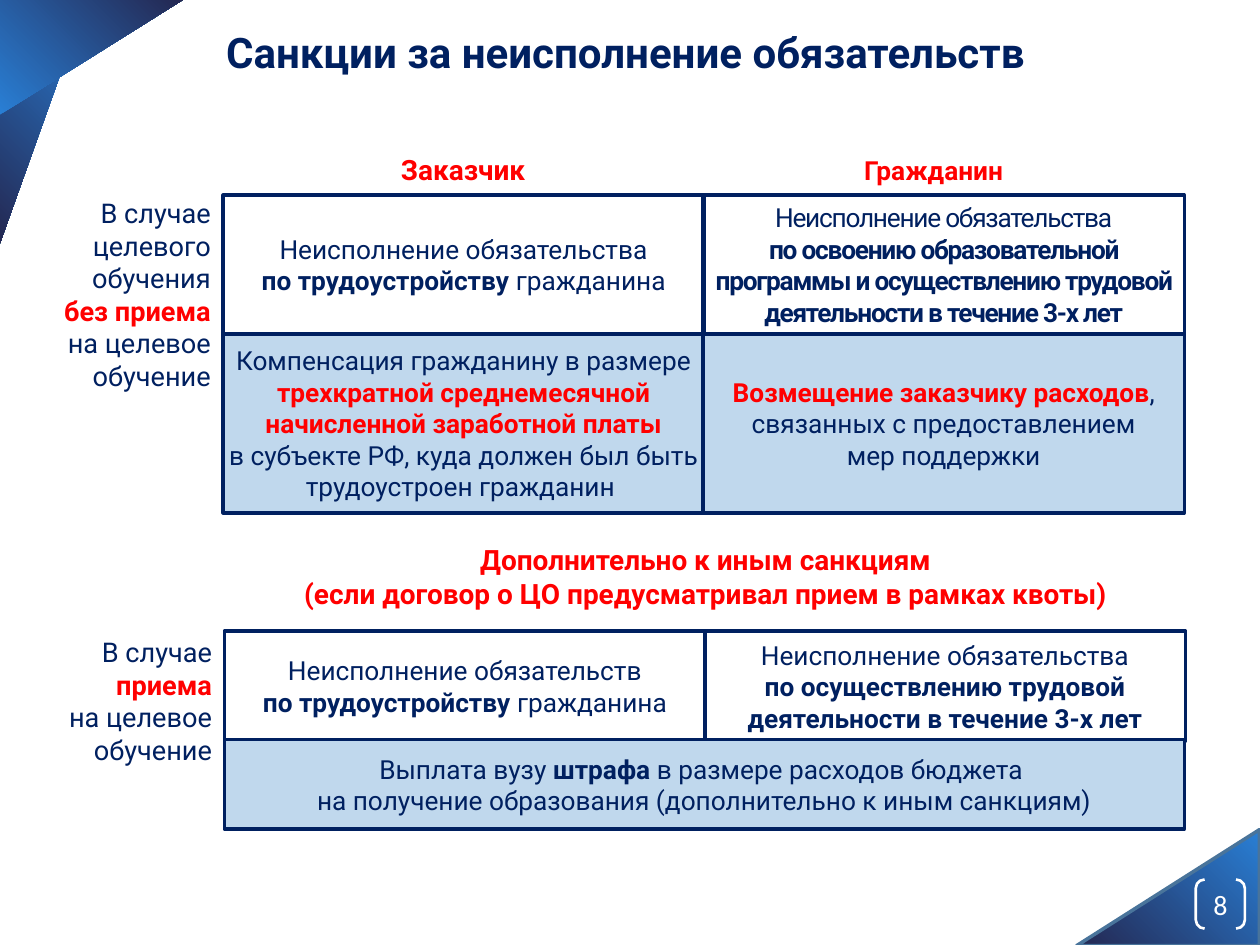
from copy import deepcopy
from dataclasses import dataclass

from pptx import Presentation
from pptx.dml.color import RGBColor
from pptx.enum.shapes import MSO_SHAPE
from pptx.enum.text import MSO_ANCHOR, MSO_AUTO_SIZE, PP_ALIGN
from pptx.util import Inches, Pt

TRIANGLE, RECTANGLE = MSO_SHAPE.RIGHT_TRIANGLE, MSO_SHAPE.RECTANGLE
BRACKETS = MSO_SHAPE.DOUBLE_BRACKET
CENTER, RIGHT = PP_ALIGN.CENTER, PP_ALIGN.RIGHT
TOP, MIDDLE = MSO_ANCHOR.TOP, MSO_ANCHOR.MIDDLE
NAVY, RED, WHITE, PALE = "002060", "FF0000", "FFFFFF", "C0D8ED"
GRADIENT = ("297FD5", "242852")

Box = tuple[float, float, float, float]


@dataclass
class Run:
    text: str
    bold: bool = False
    color: str = NAVY


@dataclass
class Block:
    box: Box
    paragraphs: list[list[Run]]
    size: float = 15
    align: PP_ALIGN = CENTER
    fill: str | None = None
    spacing: float = 0


@dataclass
class Corner:
    box: Box
    rotation: int
    flipped: bool = False
    outline: str | None = None


def rgb(color: str) -> RGBColor:
    return RGBColor.from_string(color)


def red(text: str) -> Run:
    return Run(text, True, RED)


def bold(text: str) -> Run:
    return Run(text, True)


def inches(box: Box) -> list[Inches]:
    return [Inches(value) for value in box]


def set_line(shape, color: str | None, width: float = 2) -> None:
    """Outline the shape, or remove its outline when there is no colour."""
    if color is None:
        shape.line.fill.background()
        return
    shape.line.color.rgb = rgb(color)
    shape.line.width = Pt(width)


def set_margins(frame, side: float, vertical: float) -> None:
    margins = {"margin_left": side, "margin_right": side,
               "margin_top": vertical, "margin_bottom": vertical}
    for name, value in margins.items():
        setattr(frame, name, Inches(value))


def add_run(paragraph, text: str, spacing: float, font: dict):
    run = paragraph.add_run()
    run.text = text
    for name, value in font.items():
        setattr(run.font, name, value)
    if spacing:
        run.font._element.set("spc", str(round(spacing * 100)))
    return run


def write(frame, paragraphs: list[list[Run]], size: float, align=CENTER,
          anchor=MIDDLE, spacing: float = 0, font_name: str = "Roboto") -> None:
    """Fill a text frame; a newline inside a run becomes a line break."""
    frame.word_wrap = True
    frame.vertical_anchor = anchor
    for index, runs in enumerate(paragraphs):
        paragraph = frame.add_paragraph() if index else frame.paragraphs[0]
        paragraph.alignment = align
        for part in runs:
            font = {"name": font_name, "size": Pt(size), "bold": part.bold}
            lines = part.text.split("\n")
            for number, line in enumerate(lines):
                if number:
                    paragraph.add_line_break()
                    # the break takes the font of the run before it
                    paragraph._p[-1].append(deepcopy(run.font._element))
                if line:
                    run = add_run(paragraph, line, spacing, font)
                    run.font.color.rgb = rgb(part.color)


def add_corner(slide, corner: Corner) -> None:
    shape = slide.shapes.add_shape(TRIANGLE, *inches(corner.box))
    shape.shadow.inherit = False
    shape.rotation = corner.rotation
    if corner.flipped:
        shape._element.spPr.xfrm.set("flipH", "1")
    shape.fill.gradient()
    shape.fill.gradient_angle = 135
    for stop, color in zip(shape.fill.gradient_stops, GRADIENT):
        stop.color.rgb = rgb(color)
    set_line(shape, corner.outline)


def add_page_number(slide, number: str) -> None:
    shape = slide.shapes.add_shape(BRACKETS, *inches((9.49, 6.98, 0.39, 0.39)))
    shape.shadow.inherit = False
    shape.adjustments[0] = 0.18
    shape.fill.background()
    set_line(shape, WHITE, 1.5)
    set_margins(shape.text_frame, 0, 0)
    write(shape.text_frame, [[Run(number, color=WHITE)]], 16, font_name="Calibri")


def add_title(slide, text: str) -> None:
    title = slide.shapes.title
    title.left, title.top, title.width, title.height = inches((0.28, 0.16, 9.37, 0.5))
    frame = title.text_frame
    frame.auto_size = MSO_AUTO_SIZE.NONE
    set_margins(frame, 0.1, 0.05)
    write(frame, [[bold(text)]], 24, anchor=TOP)


def add_label(slide, block: Block) -> None:
    label = slide.shapes.add_textbox(*inches(block.box))
    write(label.text_frame, block.paragraphs, block.size, block.align)


def add_cell(slide, block: Block) -> None:
    cell = slide.shapes.add_shape(RECTANGLE, *inches(block.box))
    cell.shadow.inherit = False
    if block.fill:
        cell.fill.solid()
        cell.fill.fore_color.rgb = rgb(block.fill)
    else:
        cell.fill.background()
    set_line(cell, NAVY)
    set_margins(cell.text_frame, 0.04, 0)
    write(cell.text_frame, block.paragraphs, block.size, block.align,
          spacing=block.spacing)


CUSTOMER_X, CITIZEN_X, CELL_W = 1.77, 5.58, 3.82
QUOTA_SHIFT = 0.01  # the lower grid stands slightly to the right
QUOTA_X = CUSTOMER_X + QUOTA_SHIFT
DUTY_Y, PENALTY_Y, QUOTA_Y, FINE_Y = 1.55, 2.65, 5.01, 5.87
DUTY_H, PENALTY_H, QUOTA_H = 1.1, 1.42, 0.87
EMPLOYMENT = [bold("по трудоустройству "), Run("гражданина")]

CORNERS = [
    Corner((8.81, 6.32, 0.92, 1.45), 270, outline="49749B"),
    Corner((0, 0, 0.69, 1.93), 180, flipped=True),
    Corner((0.27, -0.27, 0.91, 1.45), 90),
]

LABELS = [
    Block((0.35, DUTY_Y, 1.42, 1.57),
          [[Run("В случае целевого обучения\n"), red("без приема\n"),
            Run("на целевое обучение")]], 15.5, RIGHT),
    Block((CUSTOMER_X, 1.14, 3.81, 0.4), [[red("Заказчик")]], 16),
    Block((CITIZEN_X, 1.15, 3.66, 0.4), [[red("Гражданин")]]),
    Block((1.79, 4.14, 7.62, 0.87),
          [[red("Дополнительно к иным санкциям")],
           [red("(если договор о ЦО предусматривал прием в рамках квоты)")]], 16),
    Block((0.36, QUOTA_Y, 1.42, 1.1),
          [[Run("В случае "), red("приема\n"), Run("на целевое обучение")]],
          15.5, RIGHT),
]

CELLS = [
    Block((CUSTOMER_X, DUTY_Y, CELL_W, DUTY_H),
          [[Run("Неисполнение обязательства\n"), *EMPLOYMENT]]),
    Block((CITIZEN_X, DUTY_Y, CELL_W, DUTY_H),
          [[Run("Неисполнение обязательства\n"),
            bold("по освоению образовательной программы и осуществлению "
                 "трудовой деятельности в течение 3-х лет")]], spacing=-0.7),
    Block((CUSTOMER_X, PENALTY_Y, CELL_W, PENALTY_H),
          [[Run("Компенсация гражданину в размере "),
            red("трехкратной среднемесячной начисленной заработной платы")],
           [Run("в субъекте РФ, куда должен был быть трудоустроен гражданин ")]],
          fill=PALE),
    Block((CITIZEN_X, PENALTY_Y, CELL_W, PENALTY_H),
          [[red("Возмещение заказчику расходов"),
            Run(", связанных с предоставлением\nмер поддержки")]], fill=PALE),
    Block((QUOTA_X, QUOTA_Y, CELL_W, QUOTA_H),
          [[Run("Неисполнение обязательств\n"), *EMPLOYMENT]]),
    Block((CITIZEN_X + QUOTA_SHIFT, QUOTA_Y, CELL_W, QUOTA_H),
          [[Run("Неисполнение обязательства\n"),
            bold("по осуществлению трудовой\nдеятельности в течение 3-х лет")]]),
    Block((QUOTA_X, FINE_Y, 7.62, 0.71),
          [[Run("Выплата вузу "), bold("штрафа "), Run("в размере расходов бюджета ")],
           [Run("на получение образования (дополнительно к иным санкциям)")]],
          fill=PALE),
]


def main() -> None:
    deck = Presentation()
    deck.slide_width, deck.slide_height = Inches(10), Inches(7.5)
    slide = deck.slides.add_slide(deck.slide_layouts[5])
    for corner in CORNERS:
        add_corner(slide, corner)
    add_page_number(slide, "8")
    add_title(slide, "Санкции за неисполнение обязательств")
    for cell in CELLS:
        add_cell(slide, cell)
    for label in LABELS:
        add_label(slide, label)
    deck.save("out.pptx")


if __name__ == "__main__":
    main()
